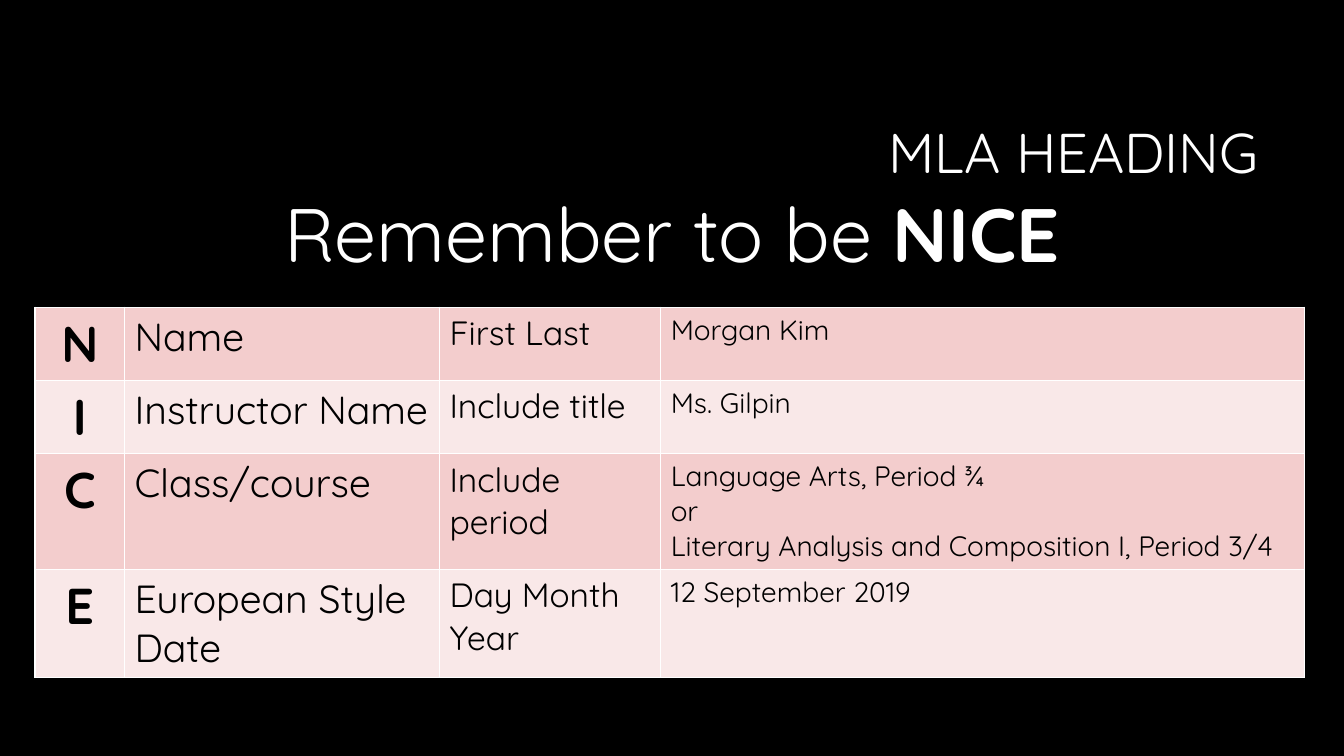
from pptx import Presentation
from pptx import util as u
from pptx.dml.color import RGBColor
from pptx.enum import text
from pptx.oxml import parse_xml
from pptx.oxml.ns import nsdecls

# Content
TITLE = "MLA HEADING"
REMINDER = [("Remember to be ", False), ("NICE", True)]
ROWS = [
    ("N", "Name", "First Last", "Morgan Kim"),
    ("I", "Instructor Name", "Include title", "Ms. Gilpin"),
    ("C", "Class/course", "Include period",
     "Language Arts, Period ¾\nor\nLiterary Analysis and Composition I, Period 3/4"),
    ("E", "European Style Date", "Day Month Year", "12 September 2019"),
]

# Style
FONT = "Quicksand"
BLACK = RGBColor(0x00, 0x00, 0x00)
WHITE = RGBColor(0xFF, 0xFF, 0xFF)
ROW_FILLS = [RGBColor(0xF3, 0xCD, 0xCD), RGBColor(0xF9, 0xE8, 0xE8)]
COLUMN_WIDTHS = [64, 225, 158, 460]
COLUMN_SIZES = [36, 28, 24, 20]
ROW_HEIGHTS = [52.2, 52.2, 82.8, 77.2]


def add_span(para, words, size, color, bold=False):
    span = para.add_run()
    span.text = words
    span.font.name = FONT
    span.font.size = u.Pt(size)
    span.font.bold = bold
    span.font.color.rgb = color


def add_borders(cell):
    properties = cell._tc.get_or_add_tcPr()
    for position, side in enumerate(("lnL", "lnR", "lnT", "lnB")):
        properties.insert(position, parse_xml(
            f'<a:{side} {nsdecls("a")} w="{u.Pt(1)}"><a:solidFill>'
            f'<a:srgbClr val="{WHITE}"/></a:solidFill></a:{side}>'))


def main():
    deck = Presentation()
    deck.slide_width, deck.slide_height = u.Pt(960), u.Pt(540)
    page = deck.slides.add_slide(deck.slide_layouts[5])
    page.background.fill.solid()
    page.background.fill.fore_color.rgb = BLACK

    # Title
    title = page.shapes.title
    title.left, title.top = u.Pt(228), u.Pt(60.5)
    title.width, title.height = u.Pt(678), u.Pt(101.5)
    title.text_frame.vertical_anchor = text.MSO_ANCHOR.MIDDLE
    para = title.text_frame.paragraphs[0]
    para.alignment = text.PP_ALIGN.RIGHT
    para.line_spacing = 0.9
    add_span(para, TITLE, 40, WHITE)

    # Reminder line
    box = page.shapes.add_textbox(u.Pt(54), u.Pt(137), u.Pt(852), u.Pt(70))
    box.text_frame.word_wrap = True
    para = box.text_frame.paragraphs[0]
    para.alignment = text.PP_ALIGN.CENTER
    para.line_spacing = 0.9
    for words, bold in REMINDER:
        add_span(para, words, 54, WHITE, bold)

    # NICE table
    table = page.shapes.add_table(
        len(ROWS), len(COLUMN_WIDTHS), u.Pt(25), u.Pt(219.5),
        u.Pt(sum(COLUMN_WIDTHS)), u.Pt(sum(ROW_HEIGHTS))).table
    for column, width in zip(table.columns, COLUMN_WIDTHS):
        column.width = u.Pt(width)
    for r, entries in enumerate(ROWS):
        table.rows[r].height = u.Pt(ROW_HEIGHTS[r])
        for c, entry in enumerate(entries):
            cell = table.cell(r, c)
            cell.fill.solid()
            cell.fill.fore_color.rgb = ROW_FILLS[r % 2]
            add_borders(cell)
            frame = cell.text_frame
            for i, line in enumerate(entry.split("\n")):
                para = frame.add_paragraph() if i else frame.paragraphs[0]
                para.alignment = text.PP_ALIGN.LEFT if c else text.PP_ALIGN.CENTER
                add_span(para, line, COLUMN_SIZES[c], BLACK, bold=c == 0)

    deck.save("out.pptx")


if __name__ == "__main__":
    main()
